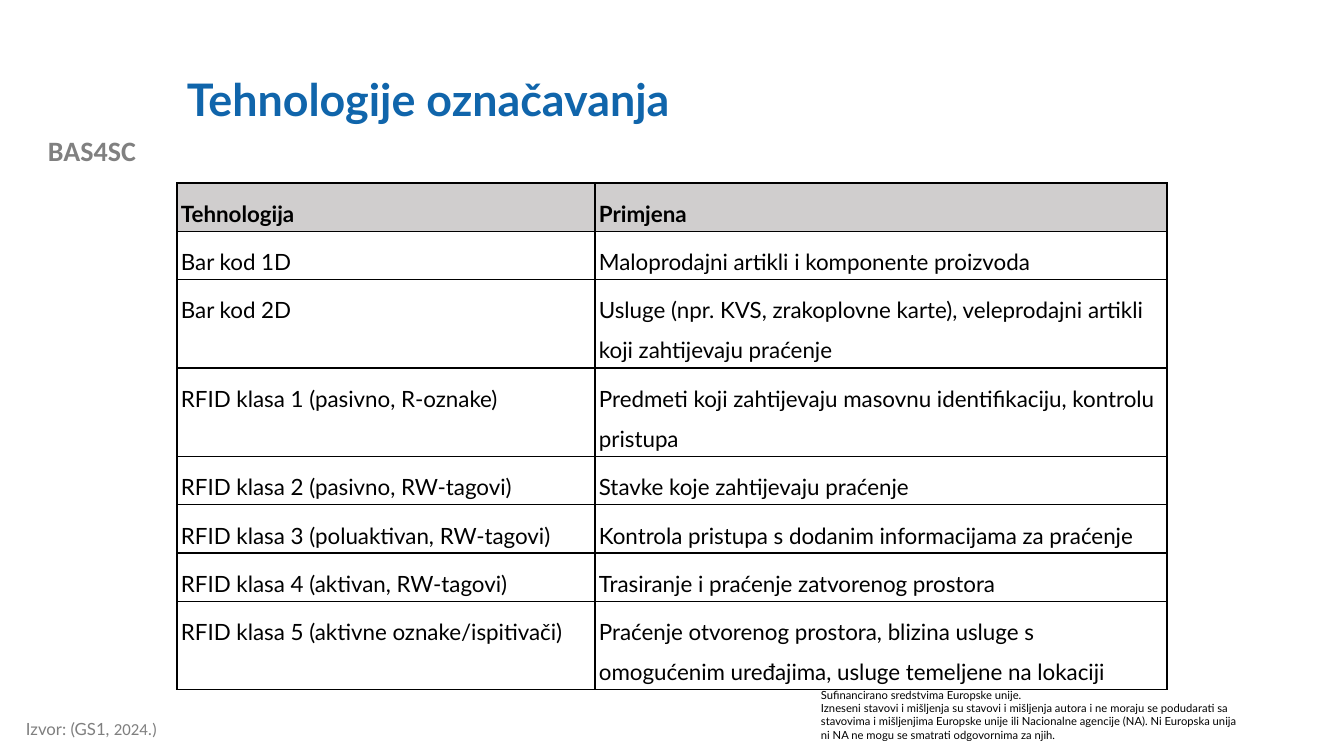
from lxml.etree import SubElement
from pptx import Presentation
from pptx.dml.color import RGBColor
from pptx.enum.text import MSO_ANCHOR, PP_ALIGN
from pptx.oxml.ns import qn
from pptx.util import Emu, Pt

BLUE = RGBColor(0x10, 0x65, 0xAB)
GRAY = RGBColor(0x80, 0x80, 0x80)
MUTED = RGBColor(0x7F, 0x7F, 0x7F)
SILVER = RGBColor(0xD0, 0xCE, 0xCE)
BLACK = RGBColor(0, 0, 0)

TITLE = "Tehnologije označavanja"
LABEL = "BAS4SC"
SOURCE = [("Izvor: (GS1, ", "Lato"), ("2024.)", "Calibri")]
NOTICE = [
    "Sufinancirano sredstvima Europske unije.",
    "Izneseni stavovi i mišljenja su stavovi i mišljenja autora i ne moraju se "
    "podudarati sa stavovima i mišljenjima Europske unije ili Nacionalne agencije "
    "(NA). Ni Europska unija ni NA ne mogu se smatrati odgovornima za njih.",
]
# Technology, use, lines of text in the row
ROWS = [
    ("Tehnologija", "Primjena", 1),
    ("Bar kod 1D", "Maloprodajni artikli i komponente proizvoda", 1),
    ("Bar kod 2D", "Usluge (npr. KVS, zrakoplovne karte), veleprodajni artikli "
     "koji zahtijevaju praćenje", 2),
    ("RFID klasa 1 (pasivno, R-oznake)",
     "Predmeti koji zahtijevaju masovnu identifikaciju, kontrolu pristupa", 2),
    ("RFID klasa 2 (pasivno, RW-tagovi)", "Stavke koje zahtijevaju praćenje", 1),
    ("RFID klasa 3 (poluaktivan, RW-tagovi)",
     "Kontrola pristupa s dodanim informacijama za praćenje", 1),
    ("RFID klasa 4 (aktivan, RW-tagovi)",
     "Trasiranje i praćenje zatvorenog prostora", 1),
    ("RFID klasa 5 (aktivne oznake/ispitivači)",
     "Praćenje otvorenog prostora, blizina usluge s omogućenim uređajima, "
     "usluge temeljene na lokaciji", 2),
]
COLS = (418, 572)
LEFT, TOP = 177, 183
LINE, PAD = 40, 8


def px(n):
    return Emu(round(n * 914400 / 100.8))


def write(frame, paras, size, color=BLACK, font="Lato", bold=False,
          align=PP_ALIGN.LEFT, space=1.0, after=0):
    """Fill a text frame; a paragraph is a string or a list of (text, font)."""
    frame.word_wrap = True
    for i, para in enumerate(paras):
        p = frame.add_paragraph() if i else frame.paragraphs[0]
        p.alignment, p.line_spacing, p.space_after = align, space, Pt(after)
        runs = [(para, font)] if isinstance(para, str) else para
        for text, face in runs:
            r = p.add_run()
            r.text = text
            r.font.name, r.font.size, r.font.bold = face, Pt(size), bold
            r.font.color.rgb = color


def add_box(slide, area, paras, size, anchor=MSO_ANCHOR.TOP, **style):
    frame = slide.shapes.add_textbox(*map(px, area)).text_frame
    frame.vertical_anchor = anchor
    write(frame, paras, size, **style)


def add_edges(cell):
    """Draw a thin black line on all four sides, ahead of the cell fill."""
    props = cell._tc.get_or_add_tcPr()
    for side in ("lnL", "lnR", "lnT", "lnB"):
        line = SubElement(props, qn("a:" + side), w=str(Pt(1)))
        fill = SubElement(line, qn("a:solidFill"))
        SubElement(fill, qn("a:srgbClr"), val=str(BLACK))


def add_grid(slide):
    high = [LINE * lines + PAD for *_, lines in ROWS]
    table = slide.shapes.add_table(
        len(ROWS), len(COLS), px(LEFT), px(TOP), px(sum(COLS)), px(sum(high))).table
    table.horz_banding = False
    for col, wide in zip(table.columns, COLS):
        col.width = px(wide)
    for i, (*texts, _) in enumerate(ROWS):
        table.rows[i].height = px(high[i])
        for j, text in enumerate(texts):
            cell = table.cell(i, j)
            cell.margin_left = cell.margin_right = px(4)
            cell.margin_top = cell.margin_bottom = px(4)
            add_edges(cell)
            if i:
                cell.fill.background()
            else:
                cell.fill.solid()
                cell.fill.fore_color.rgb = SILVER
            write(cell.text_frame, [text], 16, bold=not i, space=1.5, after=6)


def main():
    deck = Presentation()
    deck.slide_width, deck.slide_height = px(1344), px(756)
    slide = deck.slides.add_slide(deck.slide_layouts[6])
    add_box(slide, (0, 129, 184, 43), [LABEL], 20, color=GRAY, font="Calibri",
            bold=True, align=PP_ALIGN.CENTER)
    add_box(slide, (811, 683, 440, 65), NOTICE, 8)
    add_box(slide, (LEFT, 40, 1075, 123), [TITLE], 32, anchor=MSO_ANCHOR.MIDDLE,
            color=BLUE, bold=True, space=0.9)
    add_box(slide, (16, 716, 505, 40), [SOURCE], 12, color=MUTED, space=0.9)
    add_grid(slide)
    deck.save("out.pptx")


if __name__ == "__main__":
    main()
